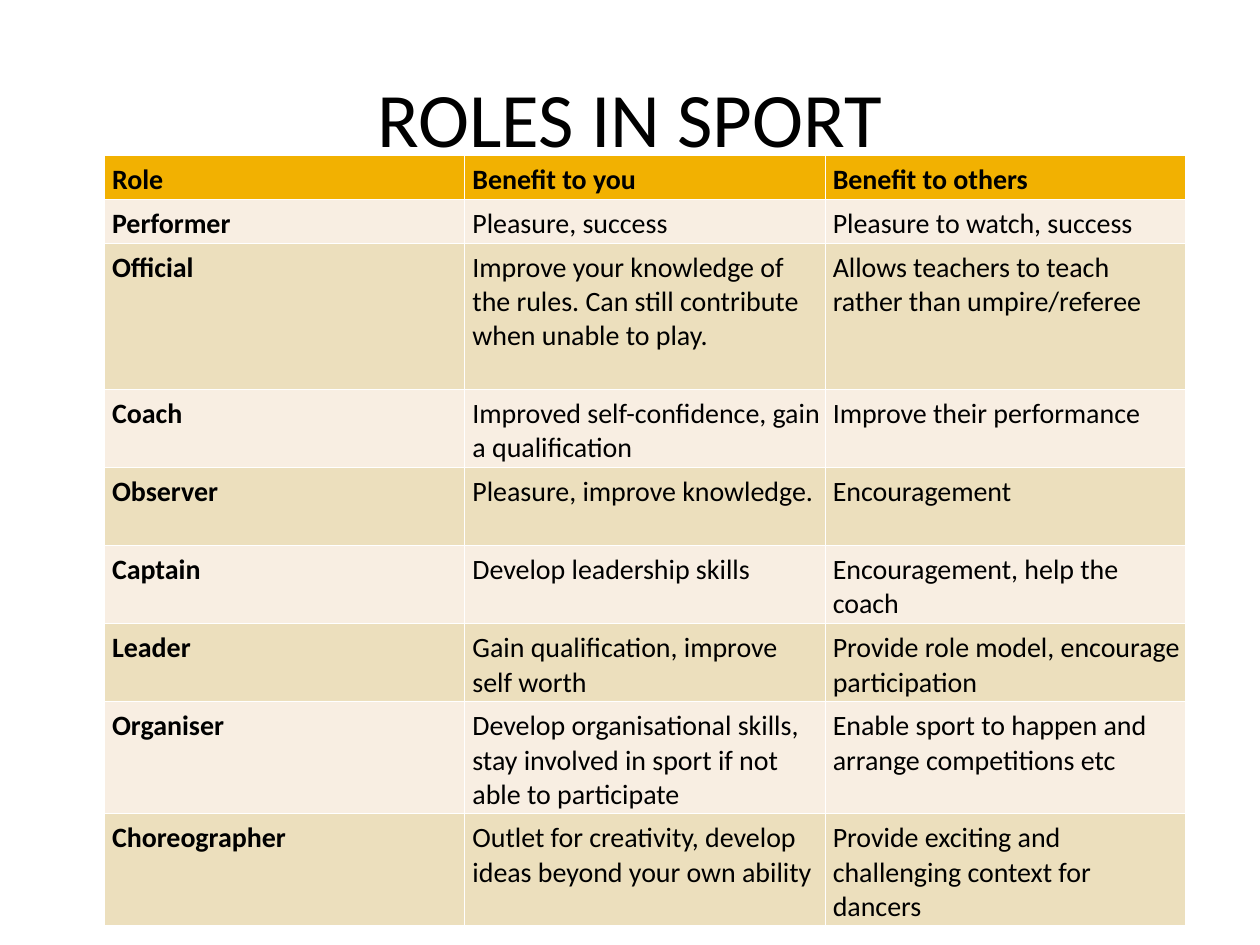
from lxml import etree
from pptx import Presentation, util as u
from pptx.dml.color import RGBColor
from pptx.enum import text
from pptx.oxml import ns

FONT = "Calibri"
BLACK, WHITE = "000000", "FFFFFF"
HEADER_FILL, LIGHT_BAND, DARK_BAND = "F2B101", "F8EEE2", "ECDFBD"
LINE_HEIGHT, ROW_PADDING = 0.27, 0.08
BORDER_WIDTH = 0.75

# Each row: lines of height, role, benefit to you, benefit to others
ROLES = [
    (1, "Role", "Benefit to you", "Benefit to others"),
    (1, "Performer", "Pleasure, success", "Pleasure to watch, success"),
    (4, "Official",
     "Improve your knowledge of the rules. Can still contribute when unable to play.",
     "Allows teachers to teach rather than umpire/referee"),
    (2, "Coach", "Improved self-confidence, gain a qualification",
     "Improve their performance"),
    (2, "Observer", "Pleasure, improve knowledge.", "Encouragement"),
    (2, "Captain", "Develop leadership skills", "Encouragement, help the coach"),
    (2, "Leader", "Gain qualification, improve self worth",
     "Provide role model, encourage participation"),
    (3, "Organiser",
     "Develop organisational skills, stay involved in sport if not able to participate",
     "Enable sport to happen and arrange competitions etc"),
    (3, "Choreographer",
     "Outlet for creativity, develop ideas beyond your own ability",
     "Provide exciting and challenging context for dancers"),
]


def rgb(hex_string):
    return RGBColor.from_string(hex_string)


def add_run(paragraph, words, size, bold=False):
    run = paragraph.add_run()
    run.text = words
    run.font.name = FONT
    run.font.size = u.Pt(size)
    run.font.bold = bold
    run.font.color.rgb = rgb(BLACK)


def add_title(slide, left, top, width, height):
    title = slide.shapes.add_textbox(left, top, width, height).text_frame
    title.word_wrap = True
    title.vertical_anchor = text.MSO_ANCHOR.MIDDLE
    title.paragraphs[0].alignment = text.PP_ALIGN.CENTER
    add_run(title.paragraphs[0], "ROLES IN SPORT", 44)


def add_borders(cell):
    properties = cell._tc.get_or_add_tcPr()
    for position, side in enumerate(("lnL", "lnR", "lnT", "lnB")):
        border = etree.Element(ns.qn(f"a:{side}"), w=str(u.Pt(BORDER_WIDTH)))
        fill = etree.SubElement(border, ns.qn("a:solidFill"))
        etree.SubElement(fill, ns.qn("a:srgbClr"), val=WHITE)
        properties.insert(position, border)


def fill_cell(cell, words, fill, bold):
    cell.margin_left = cell.margin_top = u.Inches(0.06)
    cell.margin_right, cell.margin_bottom = u.Inches(0.04), u.Inches(0.01)
    cell.fill.solid()
    cell.fill.fore_color.rgb = rgb(fill)
    add_borders(cell)
    add_run(cell.text_frame.paragraphs[0], words, 16, bold)


def add_roles_table(slide, left, top, width):
    heights = [u.Inches(lines * LINE_HEIGHT + ROW_PADDING) for lines, *_ in ROLES]
    columns = len(ROLES[0]) - 1
    table = slide.shapes.add_table(
        len(ROLES), columns, left, top, width, sum(heights)).table
    for column in table.columns:
        column.width = width // columns
    for r, (_, *entries) in enumerate(ROLES):
        table.rows[r].height = heights[r]
        band = LIGHT_BAND if r % 2 else DARK_BAND
        for c, words in enumerate(entries):
            fill_cell(table.cell(r, c), words, band if r else HEADER_FILL,
                      bold=r == 0 or c == 0)


def main():
    deck = Presentation()
    deck.slide_width, deck.slide_height = u.Inches(10), u.Inches(7.5)
    slide = deck.slides.add_slide(deck.slide_layouts[6])
    add_title(slide, u.Inches(0.5), u.Inches(0.3), u.Inches(9), u.Inches(1.25))
    add_roles_table(slide, u.Inches(0.83), u.Inches(1.23), u.Inches(8.58))
    deck.save("out.pptx")


if __name__ == "__main__":
    main()
